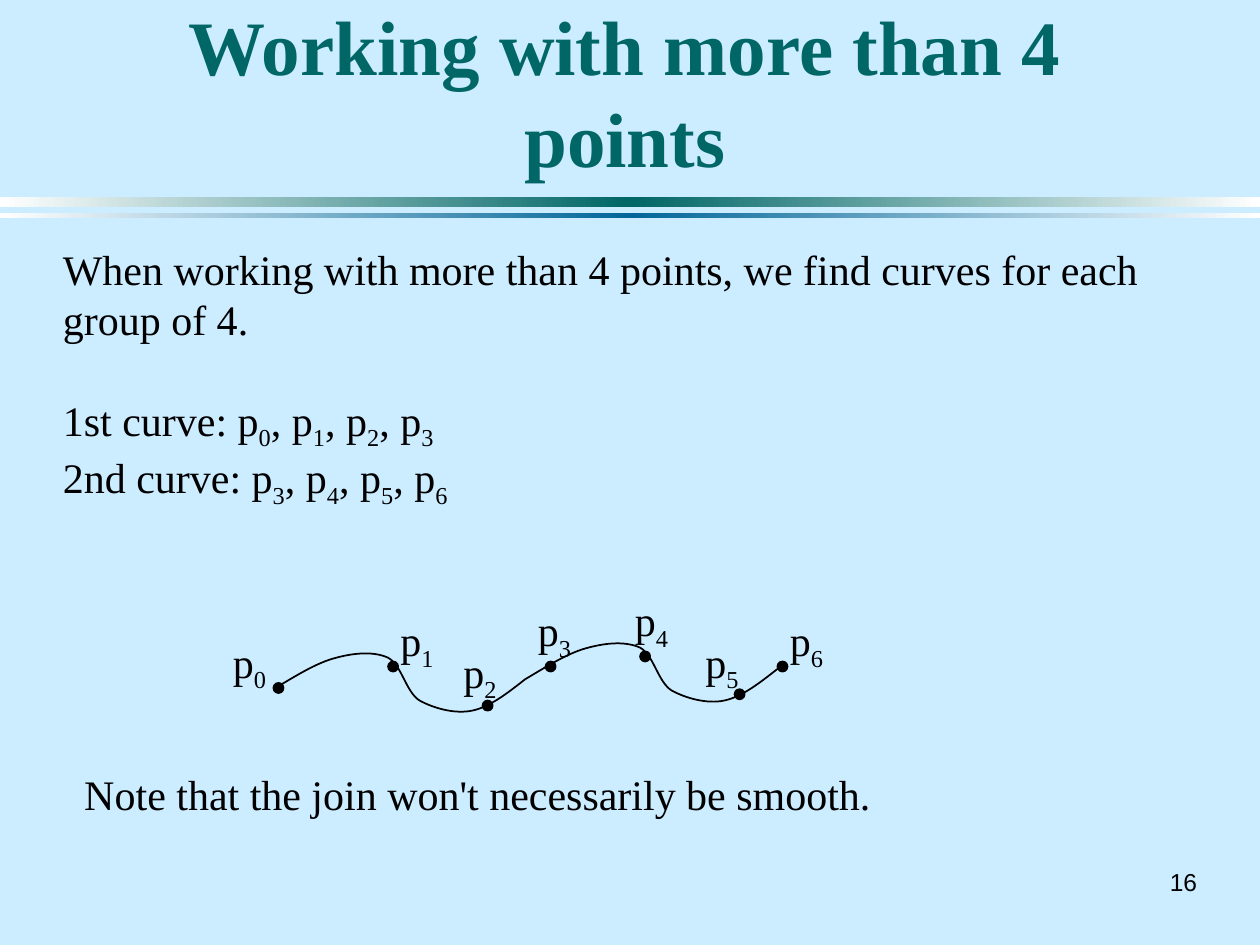
"""Build the slide on fitting curves through more than four points."""
from copy import deepcopy

from pptx import Presentation
from pptx.dml.color import RGBColor
from pptx.enum.shapes import MSO_SHAPE
from pptx.enum.text import MSO_ANCHOR, MSO_AUTO_SIZE, PP_ALIGN
from pptx.oxml.ns import qn
from pptx.util import Inches, Pt

RECT, OVAL = MSO_SHAPE.RECTANGLE, MSO_SHAPE.OVAL
LEFT, CENTER, RIGHT = PP_ALIGN.LEFT, PP_ALIGN.CENTER, PP_ALIGN.RIGHT
TOP, MIDDLE, BOTTOM = MSO_ANCHOR.TOP, MSO_ANCHOR.MIDDLE, MSO_ANCHOR.BOTTOM
GROW, FIXED = MSO_AUTO_SIZE.SHAPE_TO_FIT_TEXT, MSO_AUTO_SIZE.NONE
BLACK, WHITE, TEAL, BLUE, SKY = "000000", "FFFFFF", "006666", "006699", "CCECFF"

CURVE = [(2.17, 5.47), (2.34, 5.37), (2.51, 5.26), (2.67, 5.22),
         (2.82, 5.18), (2.97, 5.17), (3.08, 5.22),
         (3.19, 5.28), (3.22, 5.49), (3.33, 5.56),
         (3.44, 5.62), (3.61, 5.67), (3.75, 5.64),
         (3.89, 5.61), (4.03, 5.5), (4.17, 5.39)]
DOTS = [(2.17, 5.42), (3.08, 5.25), (3.83, 5.56), (4.33, 5.25),
        (5.08, 5.17), (5.83, 5.47), (6.17, 5.25)]
LABELS = [(1.75, 5), (3.08, 4.83), (3.58, 5.08), (4.17, 4.75),
          (4.94, 4.67), (5.5, 5), (6.17, 4.83)]


def rgb(value):
    """Turn a hex string into a colour."""
    return RGBColor.from_string(value)


def write(p, text, size=24, font="Times New Roman", color=BLACK, bold=False,
          align=LEFT, before=0):
    """Fill a paragraph; a digit after an underscore becomes a subscript."""
    p.alignment = align
    p.space_before = Pt(before)
    first, *rest = text.split("_")
    parts = [(first, False)]
    for part in rest:
        parts += [(part[0], True), (part[1:], False)]
    for piece, sub in parts:
        if piece:
            r = p.add_run()
            r.text = piece
            r.font.size, r.font.name, r.font.bold = Pt(size), font, bold
            r.font.color.rgb = rgb(color)
            if sub:
                r._r.get_or_add_rPr().set("baseline", "-25000")


class Canvas:
    """Hold the line style and the current slide."""

    def __init__(self, s, line=BLACK, width=1):
        self.s, self.line, self.width = s, line, width
        s.background.fill.solid()
        s.background.fill.fore_color.rgb = rgb(SKY)

    def outline(self, sp):
        """Give a shape the common outline and no shadow."""
        sp.shadow.inherit = False
        sp.line.color.rgb = rgb(self.line)
        sp.line.width = Pt(self.width)

    def text(self, x, y, w, h, *lines, wrap=False, anchor=TOP, fit=GROW, **style):
        """Add a text box; each line is a text and its own format."""
        tf = self.s.shapes.add_textbox(Inches(x), Inches(y), Inches(w), Inches(h)).text_frame
        tf.word_wrap, tf.auto_size, tf.vertical_anchor = wrap, fit, anchor
        for i, (text, extra) in enumerate(lines):
            p = tf.add_paragraph() if i else tf.paragraphs[0]
            write(p, text, **{**style, **extra})

    def band(self, y, h, color):
        """Add a full-width bar that fades to white at both ends."""
        sp = self.s.shapes.add_shape(RECT, 0, Inches(y), Inches(10), Inches(h))
        sp.shadow.inherit = False
        sp.line.fill.background()
        sp.fill.gradient()
        sp.fill.gradient_angle = 0
        gs = next(sp._element.iter(qn("a:gs")))
        gs.addnext(deepcopy(gs))
        for stop, position, value in zip(sp.fill.gradient_stops, (0, 0.5, 1),
                                         (WHITE, color, WHITE)):
            stop.position = position
            stop.color.rgb = rgb(value)

    def dot(self, x, y, d=0.08):
        """Add a round point."""
        sp = self.s.shapes.add_shape(OVAL, Inches(x), Inches(y), Inches(d), Inches(d))
        sp.fill.solid()
        sp.fill.fore_color.rgb = rgb(self.line)
        self.outline(sp)

    def curve(self, points):
        """Add an open Bezier path from a start and triples of points."""
        start, *rest = [(Inches(x), Inches(y)) for x, y in points]
        builder = self.s.shapes.build_freeform(*start)
        builder.add_line_segments(rest, close=False)
        sp = builder.convert_to_shape()
        segments = list(sp._element.iter(qn("a:lnTo")))
        for i in range(0, len(segments), 3):
            bezier = segments[i].makeelement(qn("a:cubicBezTo"), {})
            segments[i].addprevious(bezier)
            for segment in segments[i:i + 3]:
                bezier.append(segment[0])
                segment.getparent().remove(segment)
        sp.fill.background()
        self.outline(sp)


def main():
    """Build and save the slide."""
    prs = Presentation()
    prs.slide_width, prs.slide_height = Inches(10), Inches(7.5)
    c = Canvas(prs.slides.add_slide(prs.slide_layouts[6]))
    c.band(1.56, 0.08, TEAL)
    c.band(1.69, 0.04, BLUE)
    c.text(9.17, 6.83, 0.43, 0.33, ("16", {}), anchor=MIDDLE,
           size=14, font="Arial", align=RIGHT)
    c.text(0.67, 0.25, 8.58, 1.25, ("Working with more than 4 points", {}), wrap=True,
           anchor=BOTTOM, fit=FIXED, size=44, color=TEAL, bold=True, align=CENTER)
    c.text(0.4, 1.88, 9.02, 2.1,
           ("When working with more than 4 points, we find curves for each group of 4.", {}),
           ("1st curve: p_0, p_1, p_2, p_3", {"before": 28.8}),
           ("2nd curve: p_3, p_4, p_5, p_6", {}), wrap=True)
    for dx, dy in ((0, 0), (2, -0.08)):
        c.curve([(x + dx, y + dy) for x, y in CURVE])
    for x, y in DOTS:
        c.dot(x, y)
    for i, (x, y) in enumerate(LABELS):
        c.text(x, y, 0.48, 0.5, (f"p_{i}", {}))
    c.text(0.57, 6.05, 6.45, 0.5, ("Note that the join won't necessarily be smooth.", {}))
    prs.save("out.pptx")


if __name__ == "__main__":
    main()
